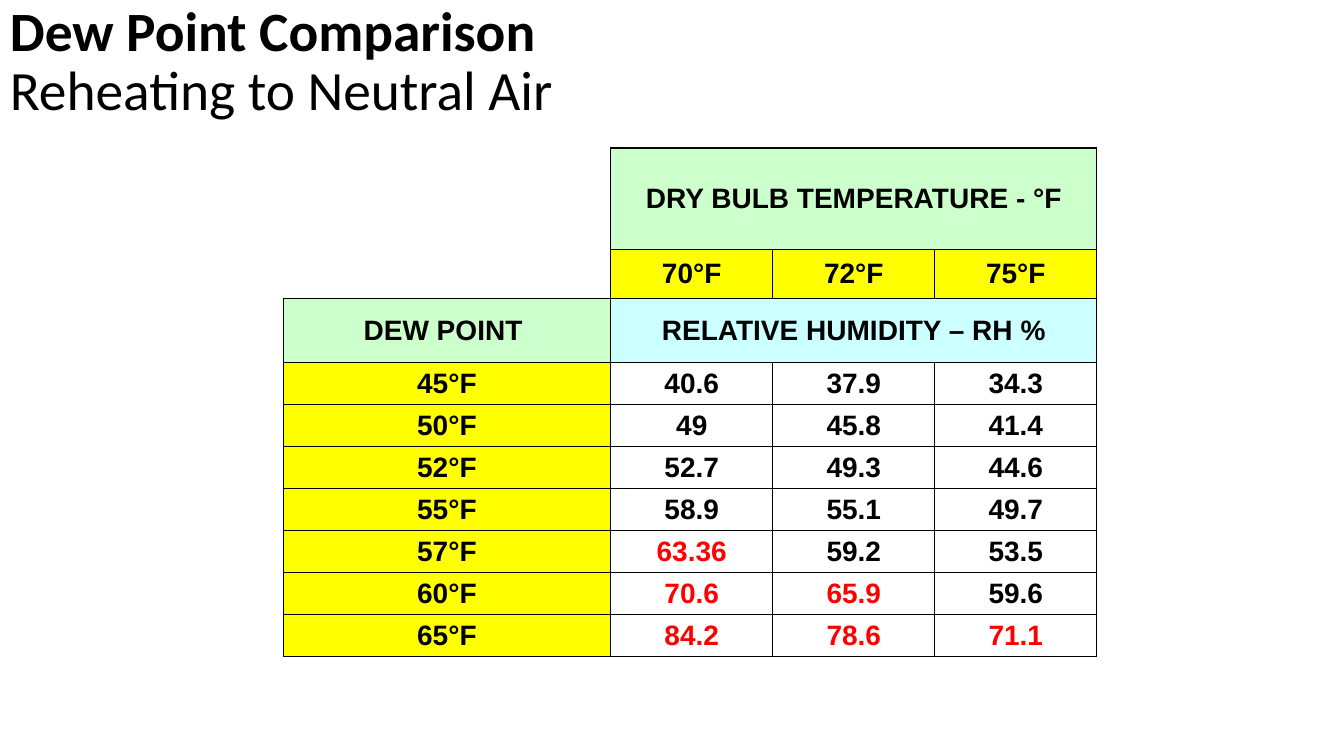
"""Build the dew point comparison slide."""
from dataclasses import dataclass

import lxml.etree
import pptx
import pptx.dml.color
import pptx.enum.text
import pptx.oxml.ns
import pptx.table
import pptx.util

Pt = pptx.util.Pt
RGBColor = pptx.dml.color.RGBColor
MIDDLE = pptx.enum.text.MSO_ANCHOR.MIDDLE

BLACK = RGBColor(0x00, 0x00, 0x00)
WHITE = RGBColor(0xFF, 0xFF, 0xFF)
RED = RGBColor(0xFF, 0x00, 0x00)
YELLOW = RGBColor(0xFF, 0xFF, 0x00)
GREEN = RGBColor(0xCC, 0xFF, 0xCC)
CYAN = RGBColor(0xCC, 0xFF, 0xFF)

RH_LIMIT = 60
COL_WIDTHS = [234, 115.75, 115.75, 115.75]
HEADER_HEIGHTS = [72.5, 35, 46]
DATA_HEIGHT = 29.75


@dataclass
class Cell:
    text: str
    fill: RGBColor
    color: RGBColor = BLACK
    span: int = 1
    borders: str = "LRTB"


@dataclass
class Reading:
    dew_point: int
    humidity: tuple[float, ...]


READINGS = [
    Reading(45, (40.6, 37.9, 34.3)),
    Reading(50, (49, 45.8, 41.4)),
    Reading(52, (52.7, 49.3, 44.6)),
    Reading(55, (58.9, 55.1, 49.7)),
    Reading(57, (63.36, 59.2, 53.5)),
    Reading(60, (70.6, 65.9, 59.6)),
    Reading(65, (84.2, 78.6, 71.1)),
]

HEADERS = [
    [Cell("", WHITE, borders="R"), Cell("DRY BULB TEMPERATURE - °F", GREEN, span=3)],
    [Cell("", WHITE, borders="RB")] + [Cell(f"{t}°F", YELLOW) for t in (70, 72, 75)],
    [Cell("DEW POINT ", GREEN), Cell("RELATIVE HUMIDITY – RH %", CYAN, span=3)],
]


def reading_row(reading: Reading) -> list[Cell]:
    values = [Cell(f"{rh}", WHITE, RED if rh > RH_LIMIT else BLACK)
              for rh in reading.humidity]
    return [Cell(f"{reading.dew_point}°F", YELLOW)] + values


def set_borders(tc: pptx.table._Cell, borders: str) -> None:
    qn = pptx.oxml.ns.qn
    tcPr = tc._tc.get_or_add_tcPr()
    for side in "LRTB":
        ln = lxml.etree.SubElement(tcPr, qn(f"a:ln{side}"), w=str(Pt(1)))
        if side in borders:
            fill = lxml.etree.SubElement(ln, qn("a:solidFill"))
            lxml.etree.SubElement(fill, qn("a:srgbClr"), val=str(BLACK))
        else:
            lxml.etree.SubElement(ln, qn("a:noFill"))


def draw_cell(table: pptx.table.Table, row: int, col: int, cell: Cell) -> None:
    tc = table.cell(row, col)
    if cell.span > 1:
        tc.merge(table.cell(row, col + cell.span - 1))
    for i in range(col, col + cell.span):
        set_borders(table.cell(row, i), cell.borders)
    tc.fill.solid()
    tc.fill.fore_color.rgb = cell.fill
    tc.vertical_anchor = MIDDLE
    tc.margin_top = tc.margin_bottom = Pt(3)
    p = tc.text_frame.paragraphs[0]
    p.text = cell.text
    p.alignment = pptx.enum.text.PP_ALIGN.CENTER
    p.font.name = "Arial"
    p.font.size = Pt(20)
    p.font.bold = True
    p.font.color.rgb = cell.color


def draw_table(s: pptx.slide.Slide) -> None:
    rows = HEADERS + [reading_row(reading) for reading in READINGS]
    heights = HEADER_HEIGHTS + [DATA_HEIGHT] * len(READINGS)
    sp = s.shapes.add_table(len(rows), len(COL_WIDTHS), Pt(202.25), Pt(105.75),
                            Pt(sum(COL_WIDTHS)), Pt(sum(heights)))
    table = sp.table
    table.first_row = table.horz_banding = False
    for column, width in zip(table.columns, COL_WIDTHS):
        column.width = Pt(width)
    for row, height in zip(table.rows, heights):
        row.height = Pt(height)
    for i, cells in enumerate(rows):
        for j, cell in enumerate(cells):
            draw_cell(table, i, j, cell)


def draw_title(s: pptx.slide.Slide) -> None:
    sp = s.shapes.add_textbox(Pt(0), Pt(0), Pt(864), Pt(90))
    tf = sp.text_frame
    tf.word_wrap = True
    tf.vertical_anchor = MIDDLE
    p = tf.paragraphs[0]
    p.text = "Dew Point Comparison\vReheating to Neutral Air"
    p.line_spacing = 0.9
    for r, bold in zip(p.runs, (True, False)):
        r.font.name = "Calibri"
        r.font.size = Pt(39.6)
        r.font.bold = bold
        r.font.color.rgb = BLACK


def main() -> None:
    prs = pptx.Presentation()
    prs.slide_width, prs.slide_height = Pt(960), Pt(540)
    s = prs.slides.add_slide(prs.slide_layouts[6])
    draw_title(s)
    draw_table(s)
    prs.save("out.pptx")


if __name__ == "__main__":
    main()
